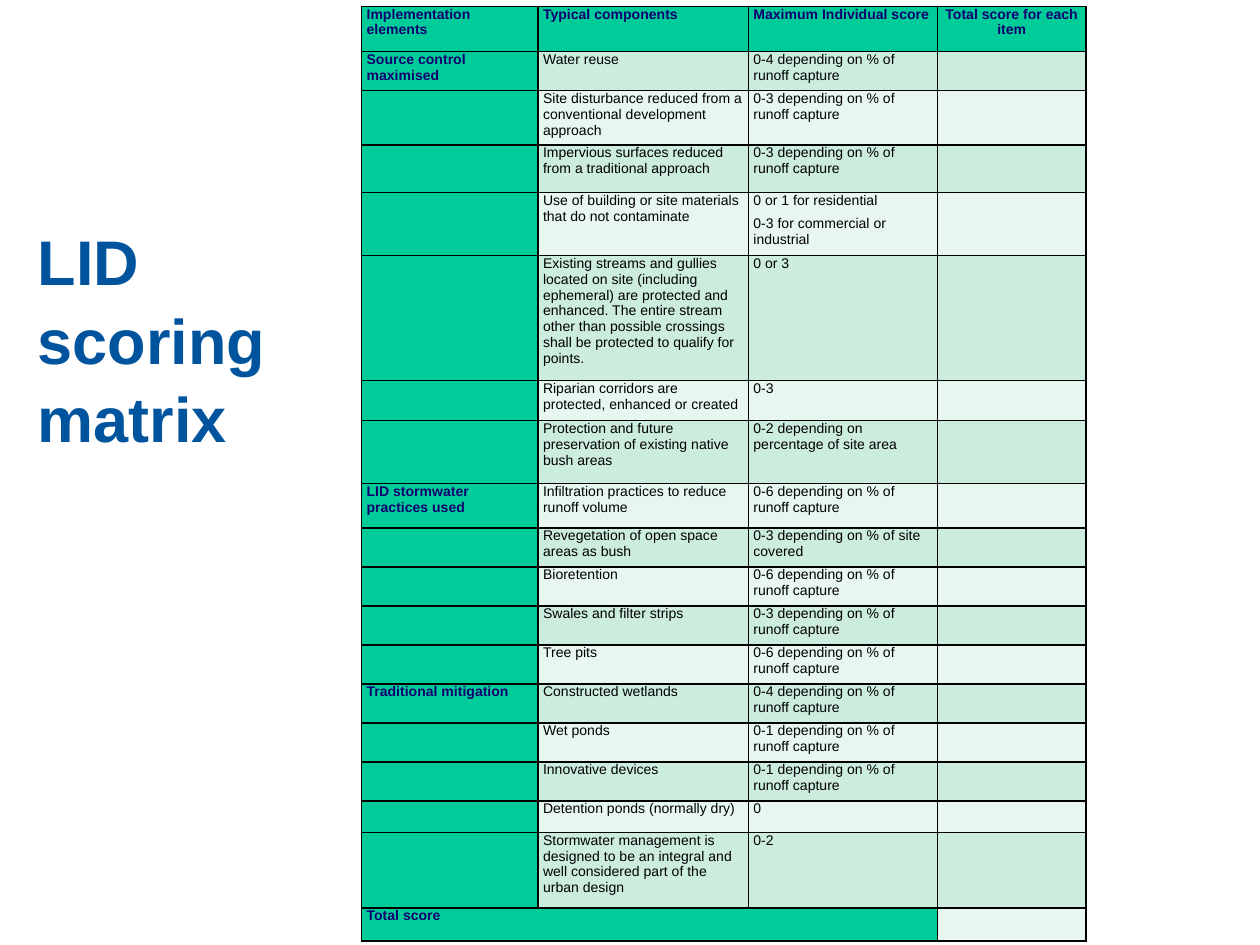
from dataclasses import dataclass

from lxml import etree
from pptx import Presentation, util as u
from pptx.dml.color import RGBColor
from pptx.enum import text
from pptx.oxml import ns

TITLE_BLUE = RGBColor(0x00, 0x54, 0x9E)
NAVY = RGBColor(0x0F, 0x00, 0x70)
BLACK = RGBColor(0, 0, 0)
GREEN = RGBColor(0x00, 0xCC, 0x99)
BANDS = RGBColor(0xE7, 0xF6, 0xEF), RGBColor(0xCC, 0xEC, 0xDE)
FONT = "Arial"

# The slide is a square grid, 1000 units wide and 750 high.
SLIDE_WIDTH, SLIDE_HEIGHT = u.Inches(10), u.Inches(7.5)
UNIT = SLIDE_WIDTH // 1000
TITLE_BOX = 20, 172, 213, 192
MATRIX_BOX = 287, 5, 575, 742
COLUMN_WIDTHS = 140, 167, 150, 118


@dataclass(frozen=True)
class Practice:
    component: str
    score: str
    height: int = 31
    element: str = ""


def capture(top_score: int) -> str:
    return f"0-{top_score} depending on % of runoff capture"


HEADINGS = ("Implementation elements", "Typical components",
            "Maximum Individual score", "Total score for each item")
HEADING_HEIGHT, TOTAL_HEIGHT = 36, 26
PRACTICES = [
    Practice("Water reuse", capture(4), element="Source control maximised"),
    Practice("Site disturbance reduced from a conventional development approach",
             capture(3), 43),
    Practice("Impervious surfaces reduced from a traditional approach", capture(3), 38),
    Practice("Use of building or site materials that do not contaminate",
             "0 or 1 for residential\n0-3 for commercial or industrial", 50),
    Practice("Existing streams and gullies located on site (including ephemeral) are "
             "protected and enhanced. The entire stream other than possible crossings "
             "shall be protected to qualify for points.", "0 or 3", 99),
    Practice("Riparian corridors are protected, enhanced or created", "0-3", 32),
    Practice("Protection and future preservation of existing native bush areas",
             "0-2 depending on percentage of site area", 50),
    Practice("Infiltration practices to reduce runoff volume", capture(6), 35,
             "LID stormwater practices used"),
    Practice("Revegetation of open space areas as bush",
             "0-3 depending on % of site covered"),
    Practice("Bioretention", capture(6)),
    Practice("Swales and filter strips", capture(3)),
    Practice("Tree pits", capture(6)),
    Practice("Constructed wetlands", capture(4), element="Traditional mitigation"),
    Practice("Wet ponds", capture(1)),
    Practice("Innovative devices", capture(1)),
    Practice("Detention ponds (normally dry)", "0", 25),
    Practice("Stormwater management is designed to be an integral and well "
             "considered part of the urban design", "0-2", 60),
]


def apply(target, values: dict) -> None:
    for name, value in values.items():
        setattr(target, name, value)


def on_grid(box: tuple[int, ...]) -> list[int]:
    return [UNIT * length for length in box]


def add_title(slide) -> None:
    title = slide.shapes.title
    apply(title, dict(zip(("left", "top", "width", "height"), on_grid(TITLE_BOX))))
    frame = title.text_frame
    frame.text = "LID\nscoring\nmatrix"
    apply(frame, {"word_wrap": True, "auto_size": text.MSO_AUTO_SIZE.NONE,
                  "vertical_anchor": text.MSO_ANCHOR.MIDDLE})
    for line in frame.paragraphs:
        apply(line, {"alignment": text.PP_ALIGN.LEFT, "line_spacing": 1.04})
        for run in line.runs:
            apply(run.font, {"name": FONT, "size": u.Pt(36), "bold": True})
            run.font.color.rgb = TITLE_BLUE


def add_borders(cell) -> None:
    properties = cell._tc.get_or_add_tcPr()
    for position, side in enumerate(("lnL", "lnR", "lnT", "lnB")):
        line = etree.Element(ns.qn(f"a:{side}"), w=str(u.Pt(1)))
        fill = etree.SubElement(line, ns.qn("a:solidFill"))
        etree.SubElement(fill, ns.qn("a:srgbClr"), val=str(BLACK))
        properties.insert(position, line)


def fill_cell(cell, words: str, color: RGBColor, label: bool, centred: bool) -> None:
    cell.text = words
    apply(cell, {"margin_left": 4 * UNIT, "margin_right": 4 * UNIT,
                 "margin_top": 0, "margin_bottom": 0})
    cell.fill.solid()
    cell.fill.fore_color.rgb = color
    add_borders(cell)
    for index, paragraph in enumerate(cell.text_frame.paragraphs):
        paragraph.space_after = u.Pt(2)
        if index:
            paragraph.space_before = u.Pt(2)
        if centred:
            paragraph.alignment = text.PP_ALIGN.CENTER
        for run in paragraph.runs:
            apply(run.font, {"name": FONT, "size": u.Pt(8), "bold": label})
            run.font.color.rgb = NAVY if label else BLACK
        if not paragraph.runs:  # keeps an empty cell from stretching its row
            etree.SubElement(paragraph._p, ns.qn("a:endParaRPr"), sz="800")


def add_matrix(slide) -> None:
    rows = [HEADINGS,
            *((item.element, item.component, item.score, "") for item in PRACTICES),
            ("Total score", "", "", "")]
    heights = [HEADING_HEIGHT, *(item.height for item in PRACTICES), TOTAL_HEIGHT]
    matrix = slide.shapes.add_table(len(rows), len(COLUMN_WIDTHS),
                                    *on_grid(MATRIX_BOX)).table
    apply(matrix, {"first_row": False, "horz_banding": False})
    for column, width in zip(matrix.columns, COLUMN_WIDTHS):
        column.width = UNIT * width
    last = len(rows) - 1
    for r, (words, height) in enumerate(zip(rows, heights)):
        matrix.rows[r].height = UNIT * height
        for c, entry in enumerate(words):
            label = r == 0 or c == 0
            green = label or (r == last and c < 3)
            fill_cell(matrix.cell(r, c), entry, GREEN if green else BANDS[r % 2],
                      label, centred=r == 0 and c == 3)
    matrix.cell(last, 0).merge(matrix.cell(last, 2))


def main() -> None:
    deck = Presentation()
    apply(deck, {"slide_width": SLIDE_WIDTH, "slide_height": SLIDE_HEIGHT})
    slide = deck.slides.add_slide(deck.slide_layouts.get_by_name("Title Only"))
    add_title(slide)
    add_matrix(slide)
    deck.save("out.pptx")


if __name__ == "__main__":
    main()
